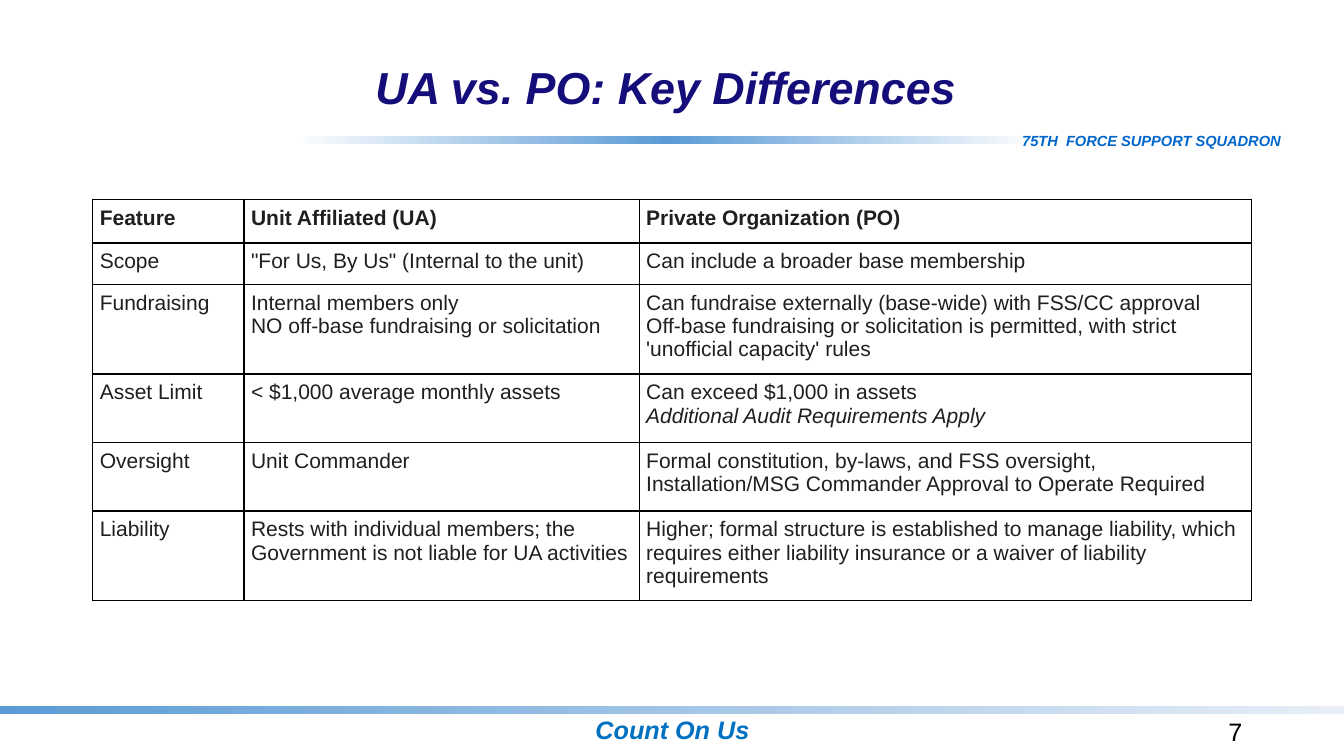
import copy

import pptx
import pptx.dml.color
import pptx.enum.shapes
import pptx.enum.text
import pptx.oxml
import pptx.oxml.ns
import pptx.util

Inches = pptx.util.Inches
Pt = pptx.util.Pt
RGBColor = pptx.dml.color.RGBColor
ALIGN = pptx.enum.text.PP_ALIGN
ANCHOR = pptx.enum.text.MSO_ANCHOR

WHITE = RGBColor(0xFF, 0xFF, 0xFF)
BLACK = RGBColor(0, 0, 0)
NAVY = RGBColor(0x15, 0x0D, 0x79)
BLUE = RGBColor(0x00, 0x70, 0xC0)
UNIT = RGBColor(0x00, 0x66, 0xCC)
SKY = RGBColor(0x5B, 0x9B, 0xD5)
PALE = RGBColor(0xE8, 0xEE, 0xF7)
INK = RGBColor(0x1F, 0x1F, 0x1F)

COLS = [1.5, 3.92, 6.07]
ROWS = [0.43, 0.41, 0.68, 0.68, 0.68, 0.85]
NOTE = "Additional Audit Requirements Apply"
CELLS = [
    ["Feature", "Unit Affiliated (UA)", "Private Organization (PO)"],
    ["Scope", "\"For Us, By Us\" (Internal to the unit)",
     "Can include a broader base membership"],
    ["Fundraising",
     "Internal members only\nNO off-base fundraising or solicitation",
     "Can fundraise externally (base-wide) with FSS/CC approval\n"
     "Off-base fundraising or solicitation is permitted, with strict "
     "'unofficial capacity' rules"],
    ["Asset Limit", "< $1,000 average monthly assets",
     "Can exceed $1,000 in assets\n" + NOTE],
    ["Oversight", "Unit Commander",
     "Formal constitution, by-laws, and FSS oversight, "
     "Installation/MSG Commander Approval to Operate Required"],
    ["Liability",
     "Rests with individual members; the Government is not liable for "
     "UA activities",
     "Higher; formal structure is established to manage liability, which "
     "requires either liability insurance or a waiver of liability "
     "requirements"],
]


class Deck:
    """Holds the style and the current slide."""
    font = "Arial"
    pad = Inches(0.07)
    rule = Pt(1)

    def __init__(self, slide):
        self.slide = slide

    def run(self, para, text, size, color, bold=False, slant=False):
        run = para.add_run()
        run.text = text
        font = run.font
        font.name, font.size = self.font, Pt(size)
        font.bold, font.italic = bold, slant
        font.color.rgb = color

    def text(self, box, text, size, color, align=ALIGN.LEFT,
             anchor=ANCHOR.MIDDLE, space=None, strong=True):
        shape = self.slide.shapes.add_textbox(*map(Inches, box))
        frame = shape.text_frame
        frame.word_wrap = True
        frame.vertical_anchor = anchor
        para = frame.paragraphs[0]
        para.alignment = align
        para.line_spacing = space
        self.run(para, text, size, color, strong, strong)

    def bar(self, box, colors):
        """Draw a band that fades evenly from left to right."""
        shape = self.slide.shapes.add_shape(
            pptx.enum.shapes.MSO_SHAPE.RECTANGLE, *map(Inches, box))
        shape.shadow.inherit = False
        shape.line.fill.background()
        fill = shape.fill
        fill.gradient()
        fill.gradient_angle = 0
        stops = shape.element.spPr.find(".//" + pptx.oxml.ns.qn("a:gsLst"))
        while len(stops) < len(colors):
            stops.append(copy.deepcopy(stops[-1]))
        for i, (stop, color) in enumerate(zip(fill.gradient_stops, colors)):
            stop.position = i / (len(colors) - 1)
            stop.color.rgb = color

    def edge(self, cell):
        """Rule all four sides of a cell."""
        props = cell._tc.get_or_add_tcPr()
        space = pptx.oxml.ns.nsdecls("a")
        for i, side in enumerate("LRTB"):
            props.insert(i, pptx.oxml.parse_xml(
                f'<a:ln{side} {space} w="{self.rule}"><a:solidFill>'
                f'<a:srgbClr val="{BLACK}"/></a:solidFill></a:ln{side}>'))

    def table(self, left, top, cols, rows, cells):
        table = self.slide.shapes.add_table(
            len(rows), len(cols), Inches(left), Inches(top),
            Inches(sum(cols)), Inches(sum(rows))).table
        table.first_row = table.horz_banding = False
        for col, width in zip(table.columns, cols):
            col.width = Inches(width)
        for i, (row, height) in enumerate(zip(table.rows, rows)):
            row.height = Inches(height)
            for cell, text in zip(row.cells, cells[i]):
                self.cell(cell, text, i == 0)

    def cell(self, cell, text, bold):
        cell.margin_left = cell.margin_right = self.pad
        cell.margin_top = cell.margin_bottom = self.pad
        cell.fill.background()
        self.edge(cell)
        frame = cell.text_frame
        for i, line in enumerate(text.split("\n")):
            para = frame.add_paragraph() if i else frame.paragraphs[0]
            self.run(para, line, 15, INK, bold, line == NOTE)


def main():
    show = pptx.Presentation()
    show.slide_width, show.slide_height = Inches(13.33), Inches(7.5)
    deck = Deck(show.slides.add_slide(show.slide_layouts[6]))

    deck.text((4.42, 7.04, 4.5, 0.4), "Count On Us", 18, BLUE, ALIGN.CENTER)
    deck.text((9.42, 7.06, 3, 0.4), "7", 18, BLACK, ALIGN.RIGHT, strong=False)
    deck.bar((2.89, 1.35, 7.43, 0.08), [WHITE, SKY, WHITE])
    deck.text((10.04, 1.25, 2.92, 0.28), "75TH  FORCE SUPPORT SQUADRON",
              10.5, UNIT)
    deck.bar((0, 7, 13.33, 0.08), [SKY, PALE])
    deck.text((-0.06, 0.6, 13.33, 0.93), "UA vs. PO: Key Differences",
              32, NAVY, ALIGN.CENTER, ANCHOR.TOP, 0.9)
    deck.table(0.92, 1.98, COLS, ROWS, CELLS)
    show.save("out.pptx")


if __name__ == "__main__":
    main()
